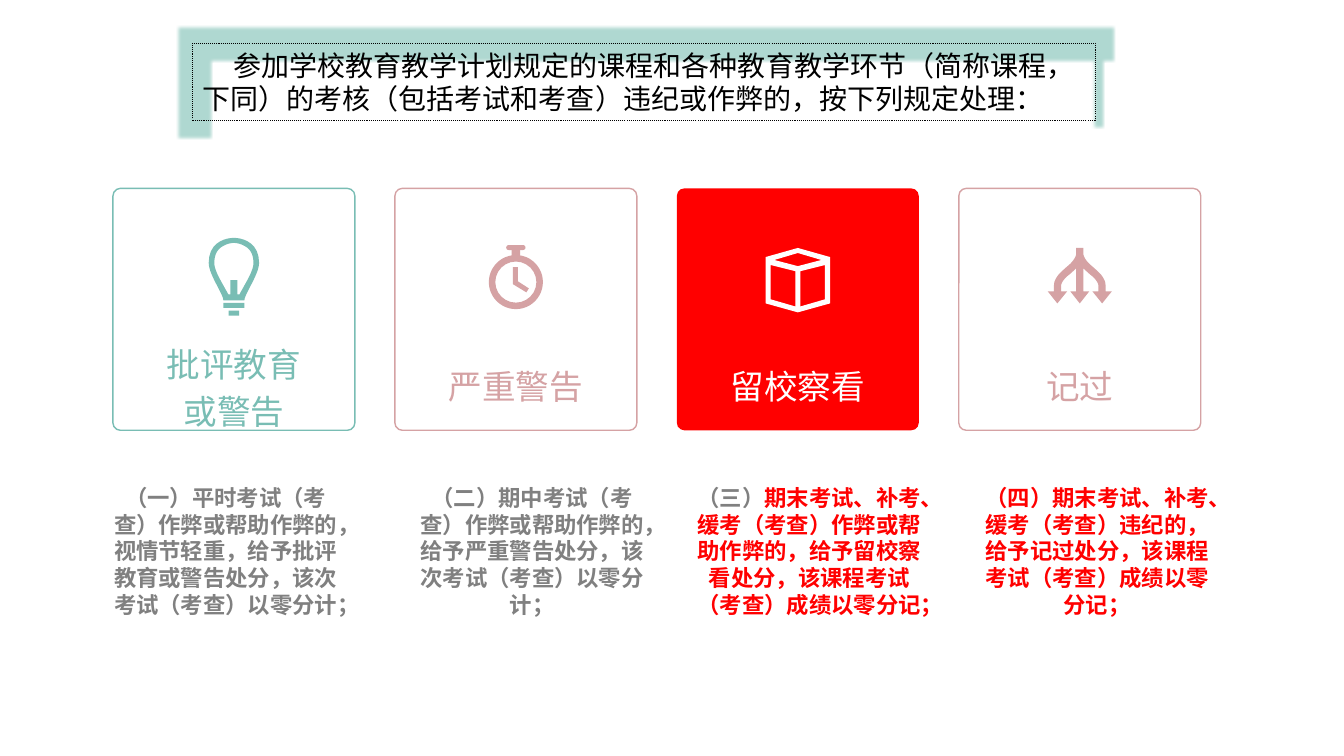
import lxml.etree
import pptx
import pptx.dml.color
import pptx.enum.dml
import pptx.enum.shapes
import pptx.enum.text
import pptx.oxml.ns
import pptx.util

Pt = pptx.util.Pt
SHAPES = pptx.enum.shapes.MSO_SHAPE
ALIGN = pptx.enum.text.PP_ALIGN
FONT = "Noto Sans CJK SC"
TEAL, PINK, RED, WHITE, GREY, BLACK = "79BDB4", "D5A2A4", "FF0000", "FFFFFF", "808080", "000000"
SHADE = "AFD8D1"

CARD_LEFT, CARD_TOP, CARD_SIZE, CARD_PITCH = 80.7, 134.6, 172.8, 201.4
LABEL_TOP, LABEL_HEIGHT = 257.8, 35.3
RULE_TOP, RULE_HEIGHT = 342, 104

# label lines, label top, colour, border, fill, fill opacity in percent
CARDS = [
    (["批评教育", "或警告"], 241.9, TEAL, TEAL, None, 100),
    (["严重警告"], LABEL_TOP, PINK, PINK, None, 100),
    (["留校察看"], LABEL_TOP, WHITE, None, RED, 100),
    (["记过"], LABEL_TOP, PINK, PINK, WHITE, 35),
]

# left, width, coloured spans
RULES = [
    (69.1, 184.3, [("（一）平时考试（考查）作弊或帮助作弊的，视情节轻重，给予批评教育或警告处分，该次考试（考查）以零分计；", GREY)]),
    (288, 184.3, [("（二）期中考试（考查）作弊或帮助作弊的，给予严重警告处分，该次考试（考查）以零分计；", GREY)]),
    (486, 184.3, [("（三）", GREY),
                  ("期末考试、补考、缓考（考查）作弊或帮助作弊的，给予留校察看处分，该课程考试（考查）成绩以零分记；", RED)]),
    (695.5, 176.4, [("（四）期末考试、补考、缓考（考查）违纪的，给予记过处分，该课程考试（考查）成绩以零分记；", RED)]),
]
BANNER = "参加学校教育教学计划规定的课程和各种教育教学环节（简称课程，下同）的考核（包括考试和考查）违纪或作弊的，按下列规定处理："


def colour(value):
    return pptx.dml.color.RGBColor.from_string(value)


def add_element(parent, tag, **attributes):
    child = lxml.etree.SubElement(parent, pptx.oxml.ns.qn(tag))
    for name, value in attributes.items():
        child.set(name, str(value))
    return child


def paint(shape, fill=None, line=None, line_width=1, opacity=100):
    shape.shadow.inherit = False
    if fill:
        shape.fill.solid()
        shape.fill.fore_color.rgb = colour(fill)
        if opacity < 100:
            rgb = shape._element.spPr.find(".//" + pptx.oxml.ns.qn("a:srgbClr"))
            add_element(rgb, "a:alpha", val=opacity * 1000)
    else:
        shape.fill.background()
    if line:
        shape.line.color.rgb = colour(line)
        shape.line.width = Pt(line_width)
    else:
        shape.line.fill.background()
    return shape


def add_preset(page, kind, left, top, width, height, adjust=None, **style):
    shape = page.shapes.add_shape(kind, Pt(left), Pt(top), Pt(width), Pt(height))
    if adjust is not None:
        shape.adjustments[0] = adjust
    return paint(shape, **style)


def write_text(box, paragraphs, size=16, bold=False, align=ALIGN.CENTER, gap=0, indent=0):
    """Fill a box; each paragraph is a list of (text, colour) spans."""
    frame = box.text_frame
    frame.word_wrap = True
    frame.vertical_anchor = pptx.enum.text.MSO_ANCHOR.TOP
    for number, spans in enumerate(paragraphs):
        para = frame.add_paragraph() if number else frame.paragraphs[0]
        para.alignment = align
        para.line_spacing = Pt(size * 1.2)
        if number:
            para.space_before = Pt(gap)
        if indent:
            para._p.get_or_add_pPr().set("indent", str(Pt(indent)))
        for text, ink in spans:
            span = para.add_run()
            span.text = text
            span.font.size = Pt(size)
            span.font.bold = bold
            span.font.name = FONT
            span.font.color.rgb = colour(ink)
            add_element(span.font._element, "a:ea", typeface=FONT)


def add_text(page, left, top, width, height, paragraphs, **style):
    box = page.shapes.add_textbox(Pt(left), Pt(top), Pt(width), Pt(height))
    write_text(box, paragraphs, **style)


def trace(steps, pieces=10):
    """Turn points and six-number Bezier steps into a list of points."""
    points = []
    for step in steps:
        if len(step) == 2:
            points.append(step)
            continue
        x0, y0 = points[-1]
        x1, y1, x2, y2, x3, y3 = step
        for piece in range(1, pieces + 1):
            t = piece / pieces
            a, b, c, d = (1 - t) ** 3, 3 * t * (1 - t) ** 2, 3 * t * t * (1 - t), t ** 3
            points.append((a * x0 + b * x1 + c * x2 + d * x3, a * y0 + b * y1 + c * y2 + d * y3))
    return points


def flip(points):
    return [(-x, y) for x, y in reversed(points)]


def mirror(steps):
    """Close a left half outline with its reflection."""
    half = trace(steps)
    return half + flip(half)


def add_outline(page, x, y, contours, fill):
    """Draw contours given relative to (x, y); inner contours are holes."""
    placed = [[(Pt(x + dx), Pt(y + dy)) for dx, dy in contour] for contour in contours]
    builder = page.shapes.build_freeform(*placed[0][0], scale=1.0)
    for number, contour in enumerate(placed):
        if number:
            builder.move_to(*contour[0])
        builder.add_line_segments(contour[1:], close=True)
    return paint(builder.convert_to_shape(), fill=fill)


def add_bulb(page, x, y, ink):
    glass = mirror([(0, 0), (-2.2, 0, -18, 0.7, -18, 18), (-18, 26, -7.5, 40.3, -7.5, 44.6)])
    hollow = mirror([(0, 3.6), (0, 3.6, -4, 3.6, -7.6, 5.8), (-11.9, 7.9, -14, 12.2, -14, 18),
                     (-14, 22.3, -10.5, 28.8, -7.6, 33.8), (-6.1, 36.7, -4.7, 38.9, -4, 40.3),
                     (-2.5, 40.3), (-2.5, 30.2)])
    add_outline(page, x, y, [glass, hollow], ink)
    for width, drop in ((15, 46.4), (7.4, 52)):
        add_preset(page, SHAPES.RECTANGLE, x - width / 2, y + drop, width, 3.6, fill=ink)


def add_stopwatch(page, x, y, ink):
    add_preset(page, SHAPES.DONUT, x - 19.3, y + 7.2, 38.6, 38.6, adjust=0.12, fill=ink)
    add_preset(page, SHAPES.RECTANGLE, x - 3, y + 3, 6, 6, fill=ink)
    add_preset(page, SHAPES.ROUNDED_RECTANGLE, x - 6.9, y, 13.8, 3.6, adjust=0.5, fill=ink)
    hands = [(-2.1, 15.8), (1.4, 15.8), (1.4, 25.9), (9.3, 31), (7.5, 33.8), (-2.1, 28)]
    add_outline(page, x, y, [hands], ink)


def add_cube(page, x, y, ink):
    edge = mirror([(0, 0), (-23, 6.5), (-23, 39.6), (0, 46)])
    side = [(-1.8, 41.8), (-19.4, 36.7), (-19.4, 12.2), (-1.8, 16.6)]
    lid = mirror([(0, 3.6), (-16.8, 8.6), (0, 13)])
    add_outline(page, x, y, [edge, side, flip(side), lid], ink)


def add_branches(page, x, y, ink):
    arrows = mirror([(-2.5, 0), (-2.5, 4.3), (-3, 7, -5, 9.5, -7, 11.5),
                     (-9.5, 13.7, -13, 16.6, -15.5, 19.5), (-17, 21.6, -18.4, 23.8, -18.4, 26.6),
                     (-18.4, 31), (-22.9, 31), (-16, 39.6), (-9, 31), (-13.3, 31), (-13.3, 26.6),
                     (-13, 24.5, -11, 22, -9, 20.2), (-7, 18.7, -4.5, 16.5, -2.5, 14.4),
                     (-2.5, 31), (-6.8, 31), (0, 39.6)])
    add_outline(page, x, y, [arrows], ink)


def add_banner(page):
    band = [(126, 18.5), (797, 18.5), (797, 45), (789, 45), (789, 92), (779, 92),
            (779, 45), (152, 45), (152, 100), (126, 100)]
    shade = add_outline(page, 0, 0, [band], SHADE)
    effects = shade._element.spPr.find(pptx.oxml.ns.qn("a:effectLst"))
    add_element(effects, "a:softEdge", rad=Pt(2.5))
    box = add_preset(page, SHAPES.RECTANGLE, 137.5, 31, 645.1, 55.4, line=BLACK, line_width=0.75)
    box.line.dash_style = pptx.enum.dml.MSO_LINE.ROUND_DOT
    write_text(box, [[(BANNER, BLACK)]], size=20, align=ALIGN.LEFT, indent=22)


def main():
    deck = pptx.Presentation()
    deck.slide_width, deck.slide_height = Pt(960), Pt(540)
    page = deck.slides.add_slide(deck.slide_layouts[6])
    add_banner(page)
    icons = [(add_bulb, 169.9), (add_stopwatch, 175), (add_cube, 177.1), (add_branches, 177.1)]
    for number, (card, (add_icon, icon_top)) in enumerate(zip(CARDS, icons)):
        lines, label_top, ink, border, fill, opacity = card
        left = CARD_LEFT + number * CARD_PITCH
        add_preset(page, SHAPES.ROUNDED_RECTANGLE, left, CARD_TOP, CARD_SIZE, CARD_SIZE,
                   adjust=0.031, fill=fill, line=border, opacity=opacity)
        add_icon(page, left + CARD_SIZE / 2, icon_top, ink)
        add_text(page, left, label_top, CARD_SIZE, LABEL_HEIGHT,
                 [[(line, ink)] for line in lines], size=24, gap=4.8)
    for left, width, spans in RULES:
        add_text(page, left, RULE_TOP, width, RULE_HEIGHT, [spans], bold=True)
    deck.save("out.pptx")


if __name__ == "__main__":
    main()
